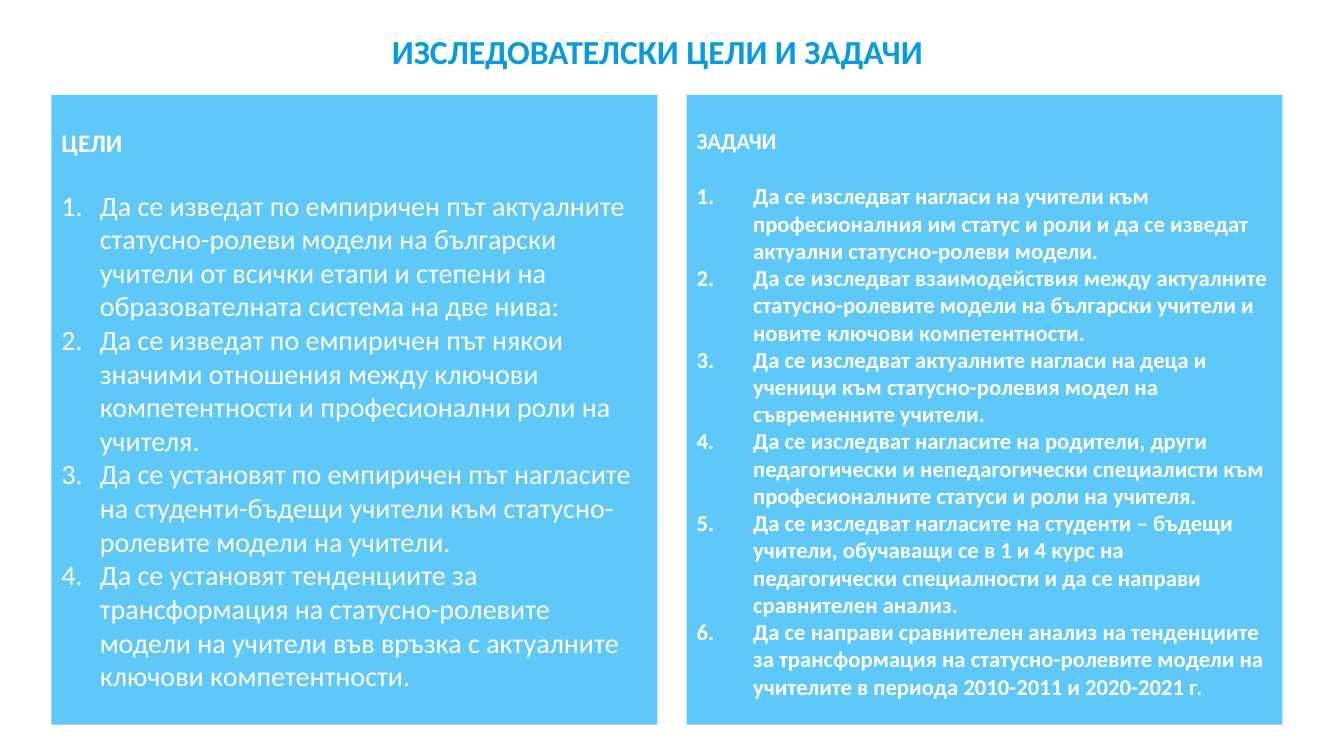
from lxml import etree
from pptx import Presentation
from pptx.dml.color import RGBColor
from pptx.enum.text import MSO_ANCHOR, MSO_AUTO_SIZE, PP_ALIGN
from pptx.oxml.ns import qn
from pptx.util import Inches, Pt

# Content
TITLE = "ИЗСЛЕДОВАТЕЛСКИ ЦЕЛИ И ЗАДАЧИ"
GOALS = [
    "Да се изведат по емпиричен път актуалните статусно-ролеви модели на български учители от всички етапи и степени на образователната система на две нива:",
    "Да се изведат по емпиричен път някои значими отношения между ключови компетентности и професионални роли на учителя.",
    "Да се установят по емпиричен път нагласите на студенти-бъдещи учители към статусно-ролевите модели на учители.",
    "Да се установят тенденциите за трансформация на статусно-ролевите модели на учители във връзка с актуалните ключови компетентности.",
]
TASKS = [
    "Да се изследват нагласи на учители към професионалния им статус и роли и да се изведат актуални статусно-ролеви модели.",
    "Да се изследват взаимодействия между актуалните статусно-ролевите модели на български учители и новите ключови компетентности.",
    "Да се изследват актуалните нагласи на деца и ученици към статусно-ролевия модел на съвременните учители.",
    "Да се изследват нагласите на родители, други педагогически и непедагогически специалисти към професионалните статуси и роли на учителя.",
    "Да се изследват нагласите на студенти – бъдещи учители, обучаващи се в 1 и 4 курс на педагогически специалности и да се направи сравнителен анализ.",
    "Да се направи сравнителен анализ на тенденциите за трансформация на статусно-ролевите модели на учителите в периода 2010-2011 и 2020-2021 г.",
]
# Heading, items, left, width, heading size, item size, bold items, indent
PANELS = [
    ("ЦЕЛИ", GOALS, 0.51, 6.01, 18, 20, False, 0.38),
    ("ЗАДАЧИ", TASKS, 6.81, 5.91, 16.2, 16.2, True, 0.56),
]

# Style
FONT = "Calibri"
BLUE = RGBColor(0x09, 0x9B, 0xDD)
SKY = RGBColor(0x5E, 0xC8, 0xF8)
WHITE = RGBColor(0xFF, 0xFF, 0xFF)
TOP, HEIGHT = 0.94, 6.25
LINE = 1.22  # line height as a share of the font size
CENTER, LEFT = PP_ALIGN.CENTER, PP_ALIGN.LEFT
MIDDLE, UPPER = MSO_ANCHOR.MIDDLE, MSO_ANCHOR.TOP
NO_FIT = MSO_AUTO_SIZE.NONE


def place(shape, left, top, width, height, anchor):
    shape.left, shape.top = Inches(left), Inches(top)
    shape.width, shape.height = Inches(width), Inches(height)
    frame = shape.text_frame
    frame.auto_size = NO_FIT
    frame.word_wrap = True
    frame.vertical_anchor = anchor
    return frame


def style(para, size, bold, color, align=LEFT, spacing=1.0, after=0):
    para.alignment = align
    para.line_spacing = spacing
    para.space_before, para.space_after = Pt(0), Pt(after)
    font = para.font
    font.name, font.size, font.bold = FONT, Pt(size), bold
    font.color.rgb = color


def bullet(para, indent=0):
    """Number the paragraph, or clear its bullet when there is no indent."""
    props = para._p.get_or_add_pPr()
    props.set("marL", str(Inches(indent)))
    props.set("indent", str(-Inches(indent)))
    if indent:
        mark = etree.Element(qn("a:buAutoNum"), type="arabicPeriod")
        tint = etree.Element(qn("a:buClr"))
        etree.SubElement(tint, qn("a:srgbClr"), val=str(WHITE))
        parts = [tint, mark]
    else:
        parts = [etree.Element(qn("a:buNone"))]
    last = props.find(qn("a:defRPr"))
    for part in parts:
        last.addprevious(part)


deck = Presentation()
deck.slide_width, deck.slide_height = Inches(13.33), Inches(7.5)
slide = deck.slides.add_slide(deck.slide_layouts[3])
title, *bodies = slide.placeholders

# Title
frame = place(title, 1.17, 0.13, 10.7, 0.81, MIDDLE)
frame.text = TITLE
style(frame.paragraphs[0], 24, True, BLUE, CENTER, 0.85)

# Panels
for body, panel in zip(bodies, PANELS):
    head, items, left, width, big, size, bold, indent = panel
    frame = place(body, left, TOP, width, HEIGHT, UPPER)
    frame.margin_top = Inches(0.32)
    body.fill.solid()
    body.fill.fore_color.rgb = SKY
    frame.text = "\n".join([head, *items])
    first, *rest = frame.paragraphs
    style(first, big, True, WHITE, after=round(big * LINE))
    bullet(first)
    for para in rest:
        style(para, size, bold, WHITE)
        bullet(para, indent)

deck.save("out.pptx")
